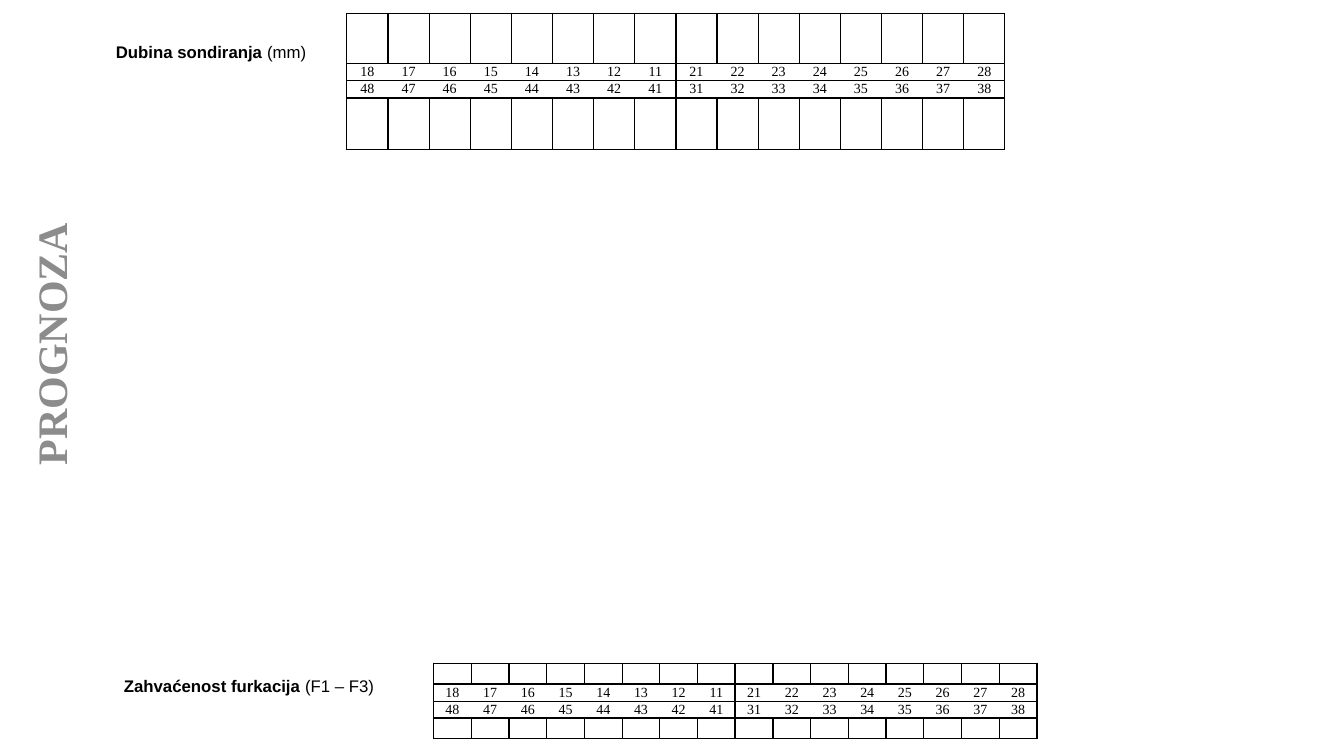
from lxml.etree import SubElement
from pptx import Presentation
from pptx.dml.color import RGBColor
from pptx.enum.text import MSO_ANCHOR, MSO_AUTO_SIZE, PP_ALIGN
from pptx.oxml.ns import qn
from pptx.util import Inches, Pt

# Content
TITLE = "PROGNOZA"
UPPER = [*range(18, 10, -1), *range(21, 29)]
LOWER = [*range(48, 40, -1), *range(31, 39)]
LABELS = [
    ("Dubina sondiranja", " (mm)", (1.05, 0.36, 2.39, 0.61)),
    ("Zahvaćenost furkacija", " (F1 – F3)", (1.13, 6.65, 2.71, 0.3)),
]
# Left, top, width, row heights
CHARTS = [
    (4.3, 6.58, 5.99, (0.21, 0.16, 0.17, 0.2)),
    (3.44, 0.13, 6.53, (0.5, 0.17, 0.17, 0.51)),
]
COLS, MIDDLE = len(UPPER), len(UPPER) // 2
THIN, THICK = 1, 1.5
ROW_LINES = [(THIN, THICK), (THICK, THIN), (THIN, THICK), (THICK, THIN)]


def rgb(hex_color):
    return RGBColor.from_string(hex_color)


def add_text(p, text, size=12, font="Arial", color="000000", bold=False):
    r = p.add_run()
    r.text = text
    r.font.size, r.font.name, r.font.bold = Pt(size), font, bold
    r.font.color.rgb = rgb(color)


def add_border(cell, side, width, color="000000"):
    ln = SubElement(cell._tc.get_or_add_tcPr(), qn(f"a:ln{side}"))
    ln.set("w", str(Pt(width)))
    if width:
        fill = SubElement(ln, qn("a:solidFill"))
        SubElement(fill, qn("a:srgbClr")).set("val", color)
    else:
        SubElement(ln, qn("a:noFill"))


def side_width(edge, numbered):
    """Width of the vertical line at a column edge."""
    if edge == MIDDLE:
        return THICK
    return 0 if numbered and 0 < edge < COLS else THIN


def add_tooth_chart(s, left, top, width, heights):
    frame = s.shapes.add_table(len(heights), COLS, Inches(left), Inches(top),
                               Inches(width), Inches(sum(heights)))
    table = frame.table
    table.first_row = table.horz_banding = False
    for col in table.columns:
        col.width = Inches(width / COLS)
    for i, numbers in enumerate((None, UPPER, LOWER, None)):
        table.rows[i].height = Inches(heights[i])
        above, below = ROW_LINES[i]
        for j in range(COLS):
            cell = table.cell(i, j)
            cell.margin_left = cell.margin_right = Inches(0.07)
            cell.margin_top = cell.margin_bottom = 0
            cell.vertical_anchor = MSO_ANCHOR.MIDDLE
            p = cell.text_frame.paragraphs[0]
            p.alignment = PP_ALIGN.CENTER
            if numbers:
                add_text(p, str(numbers[j]), size=10, font="Times New Roman")
            else:
                SubElement(p._p, qn("a:endParaRPr")).set("sz", "1000")
            add_border(cell, "L", side_width(j, numbers))
            add_border(cell, "R", side_width(j + 1, numbers))
            add_border(cell, "T", above)
            add_border(cell, "B", below)
            cell.fill.background()


prs = Presentation()
prs.slide_width, prs.slide_height = Inches(13.33), Inches(7.5)
s = prs.slides.add_slide(prs.slide_layouts[5])

# Vertical title
title = s.shapes.title
title.left, title.top, title.width, title.height = map(Inches, (-2.42, 3.15, 5.84, 0.53))
title.rotation = 270
tf = title.text_frame
tf.auto_size = MSO_AUTO_SIZE.NONE
tf.vertical_anchor = MSO_ANCHOR.MIDDLE
p = tf.paragraphs[0]
p.alignment = PP_ALIGN.CENTER
add_text(p, TITLE, size=30, font="Times New Roman", color="8C8C8C", bold=True)

# Labels
for name, unit, box in LABELS:
    tf = s.shapes.add_textbox(*map(Inches, box)).text_frame
    tf.word_wrap = True
    p = tf.paragraphs[0]
    add_text(p, name, bold=True)
    add_text(p, unit)

# Tooth charts
for chart in CHARTS:
    add_tooth_chart(s, *chart)

prs.save("out.pptx")
